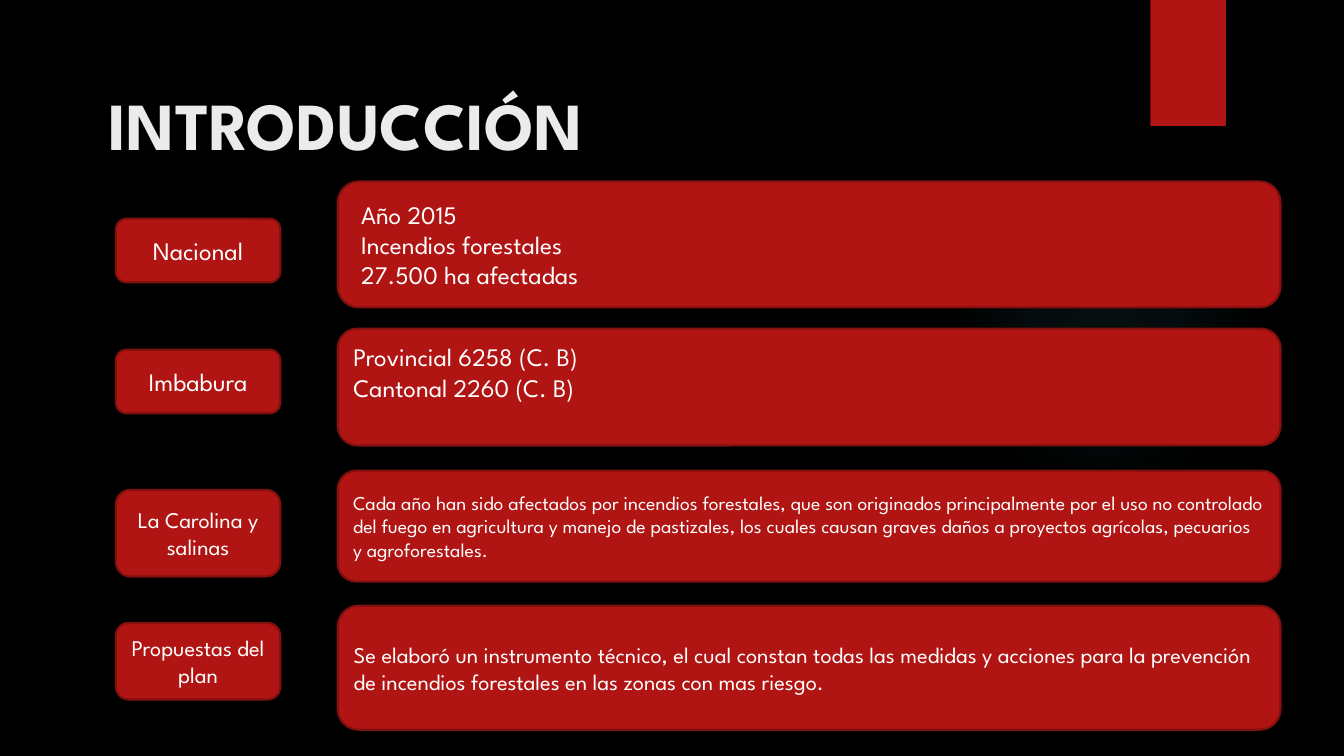
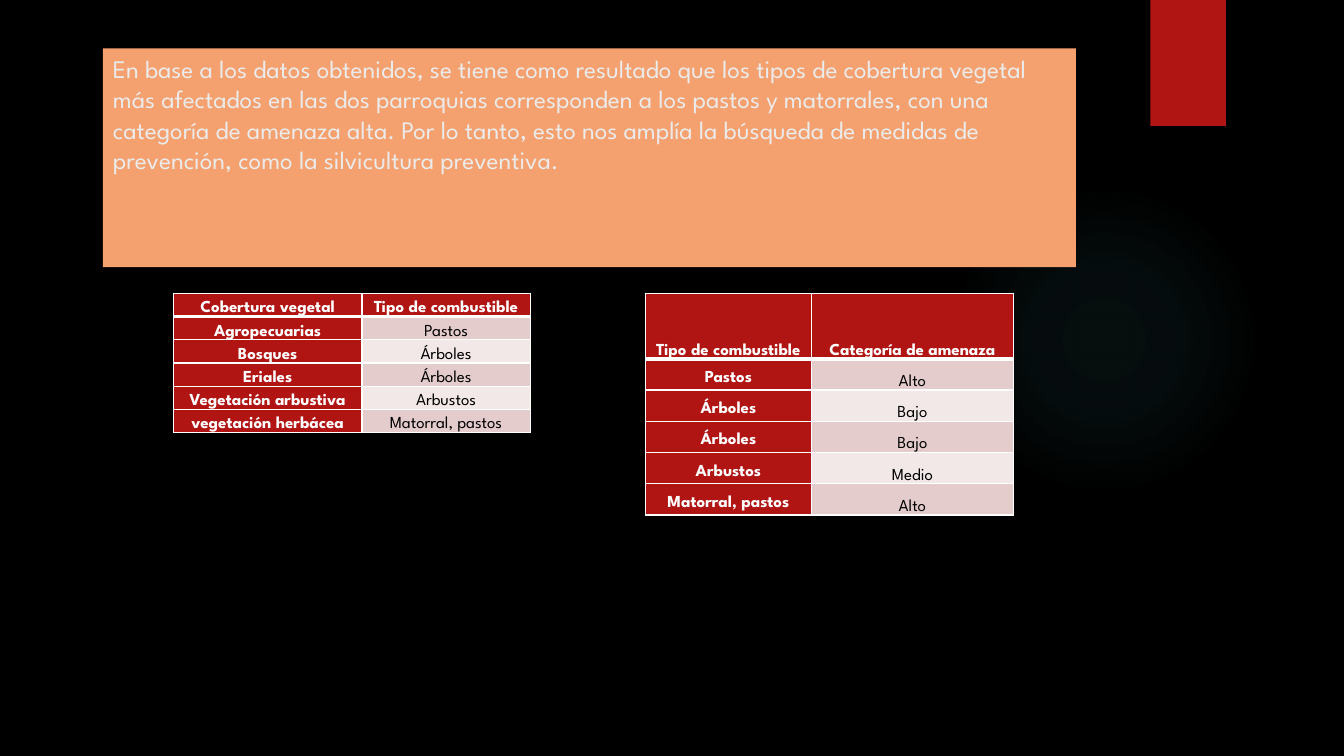
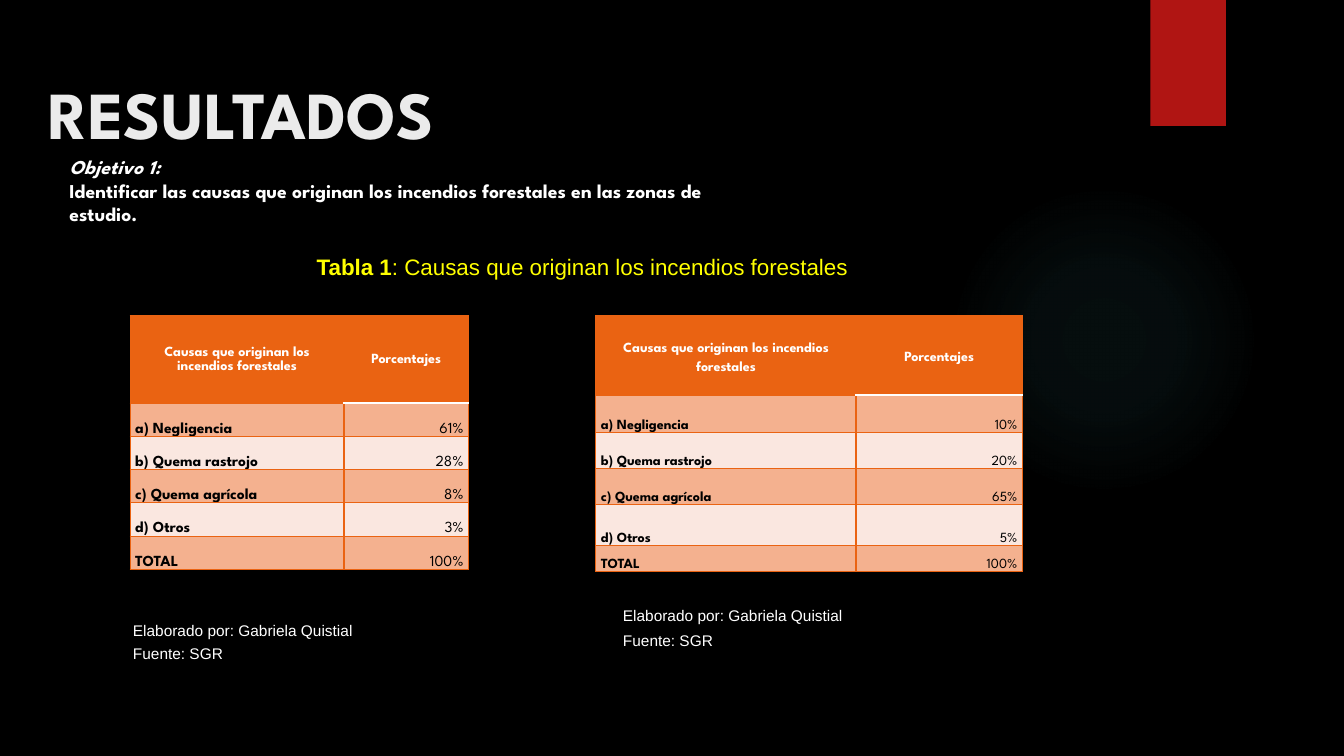
from dataclasses import dataclass, replace

from lxml.etree import SubElement
from pptx import Presentation
from pptx.dml.color import RGBColor
from pptx.enum.shapes import MSO_SHAPE
from pptx.enum.text import MSO_ANCHOR, MSO_AUTO_SIZE, PP_ALIGN
from pptx.oxml import parse_xml
from pptx.oxml.ns import nsdecls, qn
from pptx.util import Inches, Pt

BLACK = RGBColor(0x00, 0x00, 0x00)
WHITE = RGBColor(0xFF, 0xFF, 0xFF)
PALE = RGBColor(0xEB, 0xEB, 0xEB)
RED = RGBColor(0xB0, 0x15, 0x13)
DARK_RED = RGBColor(0x82, 0x10, 0x0E)
ROSE = RGBColor(0xE4, 0xCC, 0xCC)
LIGHT_ROSE = RGBColor(0xF2, 0xE8, 0xE7)
ORANGE = RGBColor(0xEA, 0x63, 0x12)
APRICOT = RGBColor(0xF4, 0xA1, 0x6F)
PEACH = RGBColor(0xF4, 0xB1, 0x8F)
LIGHT_PEACH = RGBColor(0xFA, 0xE7, 0xE0)
YELLOW = RGBColor(0xFF, 0xFF, 0x00)
TEAL = RGBColor(0x50, 0xB9, 0xC1)

SPARTAN = "League Spartan"
ARIAL = "Arial"
LEADING = 1.2
TITLE_ONLY, TITLE_AND_BODY = 5, 1


@dataclass(frozen=True)
class TableLook:
    head_fill: RGBColor
    label_color: RGBColor
    bands: tuple
    edge: RGBColor
    edge_width: float
    inner_width: float
    rule_width: float
    rule_start: int
    head_size: int
    body_size: int
    leading: float
    head_anchor: MSO_ANCHOR
    label_anchor: MSO_ANCHOR
    label_align: PP_ALIGN
    value_align: PP_ALIGN
    label_fill: RGBColor = None


COVER_LOOK = TableLook(
    RED, WHITE, (ROSE, LIGHT_ROSE), WHITE, 1, 1, 3, 0, 12, 12, 1.38,
    MSO_ANCHOR.BOTTOM, MSO_ANCHOR.BOTTOM, PP_ALIGN.CENTER, PP_ALIGN.CENTER, RED)
THREAT_LOOK = replace(COVER_LOOK, label_anchor=MSO_ANCHOR.MIDDLE)
CAUSE_LOOK = TableLook(
    ORANGE, BLACK, (PEACH, LIGHT_PEACH), ORANGE, 0.75, 1.5, 1.5, 1, 10, 11, 0.98,
    MSO_ANCHOR.MIDDLE, MSO_ANCHOR.BOTTOM, PP_ALIGN.LEFT, PP_ALIGN.RIGHT)
SMALL_CAUSE_LOOK = replace(CAUSE_LOOK, body_size=10, leading=1.38)


class Report:
    def __init__(self):
        self.deck = Presentation()
        self.deck.slide_width = Inches(13.33)
        self.deck.slide_height = Inches(7.5)
        self.page = None

    def start(self, layout=TITLE_ONLY):
        self.page = self.deck.slides.add_slide(self.deck.slide_layouts[layout])
        if len(self.deck.slides) == 1:
            self.dress_master()

    def dress_master(self):
        master = self.deck.slide_master
        master.background.fill.solid()
        master.background.fill.fore_color.rgb = BLACK
        band = self.shape(MSO_SHAPE.RECTANGLE, (11.41, 0, 0.75, 1.25), RED)
        glow = self.shape(MSO_SHAPE.OVAL, (9.41, 1.83, 3.08, 3.08), TEAL)
        stops = "".join(
            f'<a:gs pos="{place * 1000}"><a:srgbClr val="{TEAL}">'
            f'<a:alpha val="{alpha * 1000}"/></a:srgbClr></a:gs>'
            for place, alpha in ((0, 7), (36, 6), (69, 0), (100, 0)))
        gradient = parse_xml(
            f'<a:gradFill {nsdecls("a")} rotWithShape="1"><a:gsLst>{stops}</a:gsLst>'
            '<a:path path="circle"><a:fillToRect l="50000" t="50000" r="50000" '
            'b="50000"/></a:path></a:gradFill>')
        properties = glow.element.spPr
        properties.replace(properties.find(qn("a:solidFill")), gradient)
        for item in (band, glow):
            master.shapes.element.insert(2, item.element)

    def shape(self, kind, at, fill, line=None):
        shape = self.page.shapes.add_shape(kind, *map(Inches, at))
        shape.shadow.inherit = False
        shape.fill.solid()
        shape.fill.fore_color.rgb = fill
        if line is None:
            shape.line.fill.background()
        else:
            shape.line.color.rgb = line
            shape.line.width = Pt(1.5)
        return shape

    def span(self, para, text, size, color, bold=False, italic=False, font=SPARTAN):
        span = para.add_run()
        span.text = text
        span.font.name = font
        span.font.size = Pt(size)
        span.font.color.rgb = color
        span.font.bold = bold
        span.font.italic = italic

    def frame(self, box, anchor):
        frame = box.text_frame
        frame.word_wrap = True
        frame.auto_size = MSO_AUTO_SIZE.NONE
        frame.vertical_anchor = anchor
        return frame

    def place(self, box, at):
        box.left, box.top, box.width, box.height = map(Inches, at)

    def title(self, text, at, size=48, bold=True, fill=None):
        box = self.page.shapes.title
        self.place(box, at)
        if fill is not None:
            box.fill.solid()
            box.fill.fore_color.rgb = fill
        para = self.frame(box, MSO_ANCHOR.TOP).paragraphs[0]
        para.alignment = PP_ALIGN.LEFT
        para.line_spacing = Pt(size * LEADING)
        self.span(para, text, size, PALE, bold)

    def card(self, at, lines, size, align=PP_ALIGN.LEFT, left=0.1, bottom=0.05):
        box = self.shape(MSO_SHAPE.ROUNDED_RECTANGLE, at, RED, DARK_RED)
        frame = self.frame(box, MSO_ANCHOR.MIDDLE)
        frame.margin_left = Inches(left)
        frame.margin_bottom = Inches(bottom)
        for index, line in enumerate(lines):
            para = frame.add_paragraph() if index else frame.paragraphs[0]
            para.alignment = align
            para.line_spacing = Pt(size * LEADING)
            self.span(para, line, size, WHITE)

    def caption(self, label, text, at):
        box = self.page.placeholders[1]
        self.place(box, at)
        para = self.frame(box, MSO_ANCHOR.MIDDLE).paragraphs[0]
        properties = para._p.get_or_add_pPr()
        properties.set("marL", "0")
        properties.set("indent", "0")
        SubElement(properties, qn("a:buNone"))
        para.space_before = Pt(0)
        self.span(para, label, 16, YELLOW, bold=True, font=ARIAL)
        self.span(para, text, 16, YELLOW, font=ARIAL)

    def text_box(self, at):
        box = self.page.shapes.add_textbox(*map(Inches, at))
        return self.frame(box, MSO_ANCHOR.TOP)

    def objective(self, label, text, at):
        frame = self.text_box(at)
        for para, line, italic in ((frame.paragraphs[0], label, True),
                                   (frame.add_paragraph(), text, False)):
            para.line_spacing = Pt(14 * LEADING)
            self.span(para, line, 14, WHITE, True, italic)

    def credit(self, at, gap):
        frame = self.text_box(at)
        self.span(frame.paragraphs[0], "Elaborado por: Gabriela Quistial", 11, WHITE, font=ARIAL)
        para = frame.add_paragraph()
        para.space_before = Pt(gap)
        self.span(para, "Fuente: SGR", 11, WHITE, font=ARIAL)

    def borders(self, cell, lines):
        properties = cell._tc.get_or_add_tcPr()
        for side, (color, width) in zip("LRTB", lines):
            properties.append(parse_xml(
                f'<a:ln{side} {nsdecls("a")} w="{Pt(width)}"><a:solidFill>'
                f'<a:srgbClr val="{color}"/></a:solidFill></a:ln{side}>'))

    def cell(self, cell, text, row, column, look):
        head, label = row == 0, column == 0
        edge = (look.edge, look.edge_width)
        inner = (look.edge, look.inner_width)
        rule = (WHITE, look.rule_width) if column >= look.rule_start else edge
        self.borders(cell, (edge if label else inner, inner if label else edge,
                            rule if row == 1 else edge, rule if head else edge))
        fill = look.bands[(row - 1) % 2]
        color, size, anchor, align = BLACK, look.body_size, MSO_ANCHOR.BOTTOM, look.value_align
        if label:
            fill = look.label_fill or fill
            color, anchor, align = look.label_color, look.label_anchor, look.label_align
        if head:
            fill, color, size = look.head_fill, WHITE, look.head_size
            anchor, align = look.head_anchor, PP_ALIGN.CENTER
        cell.fill.solid()
        cell.fill.fore_color.rgb = fill
        cell.vertical_anchor = anchor
        cell.margin_left = cell.margin_right = Inches(0.05)
        cell.margin_top = cell.margin_bottom = 0
        para = cell.text_frame.paragraphs[0]
        para.alignment = align
        para.line_spacing = Pt(size * look.leading)
        self.span(para, text, size, color, head or label)

    def table(self, left, top, widths, heights, rows, look):
        table = self.page.shapes.add_table(
            len(rows), len(widths), Inches(left), Inches(top),
            Inches(sum(widths)), Inches(sum(heights))).table
        for column, width in zip(table.columns, widths):
            column.width = Inches(width)
        for row, height in zip(table.rows, heights):
            row.height = Inches(height)
        for row, texts in enumerate(rows):
            for column, text in enumerate(texts):
                self.cell(table.cell(row, column), text, row, column, look)


def introduction(report):
    report.start()
    report.title("INTRODUCCIÓN", (0.98, 0.78, 9.65, 0.98))
    for top, height, size, text in (
            (2.17, 0.63, 18, "Nacional"),
            (3.47, 0.63, 18, "Imbabura"),
            (4.86, 0.86, 16, "La Carolina y salinas"),
            (6.18, 0.76, 16, "Propuestas del plan")):
        report.card((1.15, top, 1.63, height), [text], size, PP_ALIGN.CENTER)
    left, width = 3.35, 9.35
    report.card((left, 1.8, width, 1.25),
                ["Año 2015", "Incendios forestales", "27.500 ha afectadas"], 18, left=0.17)
    report.card((left, 3.26, width, 1.16),
                ["Provincial 6258 (C. B)", "Cantonal 2260 (C. B)"], 18, bottom=0.35)
    report.card((left, 4.67, width, 1.1), [
        "Cada año han sido afectados por incendios forestales, que son originados "
        "principalmente por el uso no controlado del fuego en agricultura y manejo de "
        "pastizales, los cuales causan graves daños a proyectos agrícolas, pecuarios y "
        "agroforestales."], 14)
    report.card((left, 6.01, width, 1.23), [
        "Se elaboró un instrumento técnico, el cual constan todas las medidas y acciones "
        "para la prevención de incendios forestales en las zonas con mas riesgo."], 16)


def fuel_types(report):
    report.start()
    report.title(
        "En base a los datos obtenidos, se tiene como resultado que los tipos de cobertura "
        "vegetal más afectados en las dos parroquias corresponden a los pastos y matorrales, "
        "con una categoría de amenaza alta. Por lo tanto, esto nos amplía la búsqueda de "
        "medidas de prevención, como la silvicultura preventiva.",
        (1.02, 0.48, 9.65, 2.17), 18, False, APRICOT)
    covers = ("Agropecuarias", "Bosques", "Eriales", "Vegetación arbustiva",
              "vegetación herbácea")
    fuels = ("Pastos", "Árboles", "Árboles", "Arbustos", "Matorral, pastos")
    threats = ("Alto", "Bajo", "Bajo", "Medio", "Alto")
    report.table(1.72, 2.91, (1.87, 1.67), [0.23] * 6,
                 [("Cobertura vegetal", "Tipo de combustible"), *zip(covers, fuels)], COVER_LOOK)
    report.table(6.4, 2.91, (1.65, 2), [0.65] + [0.31] * 5,
                 [("Tipo de combustible", "Categoría de amenaza"), *zip(fuels, threats)],
                 THREAT_LOOK)


def results(report):
    report.start(TITLE_AND_BODY)
    report.title("RESULTADOS", (0.38, 0.67, 4.37, 0.85))
    report.objective(
        "Objetivo 1:",
        "Identificar las causas que originan los incendios forestales en las zonas de estudio.",
        (0.59, 1.49, 6.67, 0.81))
    report.caption("Tabla 1", ": Causas que originan los incendios forestales",
                   (3.04, 2.44, 5.74, 0.4))
    head = ("Causas que originan los incendios forestales", "Porcentajes")
    causes = ("a) Negligencia", "b) Quema rastrojo", "c) Quema agrícola", "d) Otros", "TOTAL")
    report.table(1.29, 3.13, (2.12, 1.24), [0.87] + [0.33] * 5,
                 [head, *zip(causes, ("61%", "28%", "8%", "3%", "100%"))], CAUSE_LOOK)
    report.table(5.91, 3.13, (2.58, 1.65), (0.79, 0.37, 0.36, 0.36, 0.4, 0.26),
                 [head, *zip(causes, ("10%", "20%", "65%", "5%", "100%"))], SMALL_CAUSE_LOOK)
    report.credit((1.22, 6.11, 2.82, 0.51), 3.5)
    report.credit((6.08, 5.96, 2.82, 0.54), 5)


def main():
    report = Report()
    introduction(report)
    fuel_types(report)
    results(report)
    report.deck.save("out.pptx")


if __name__ == "__main__":
    main()
